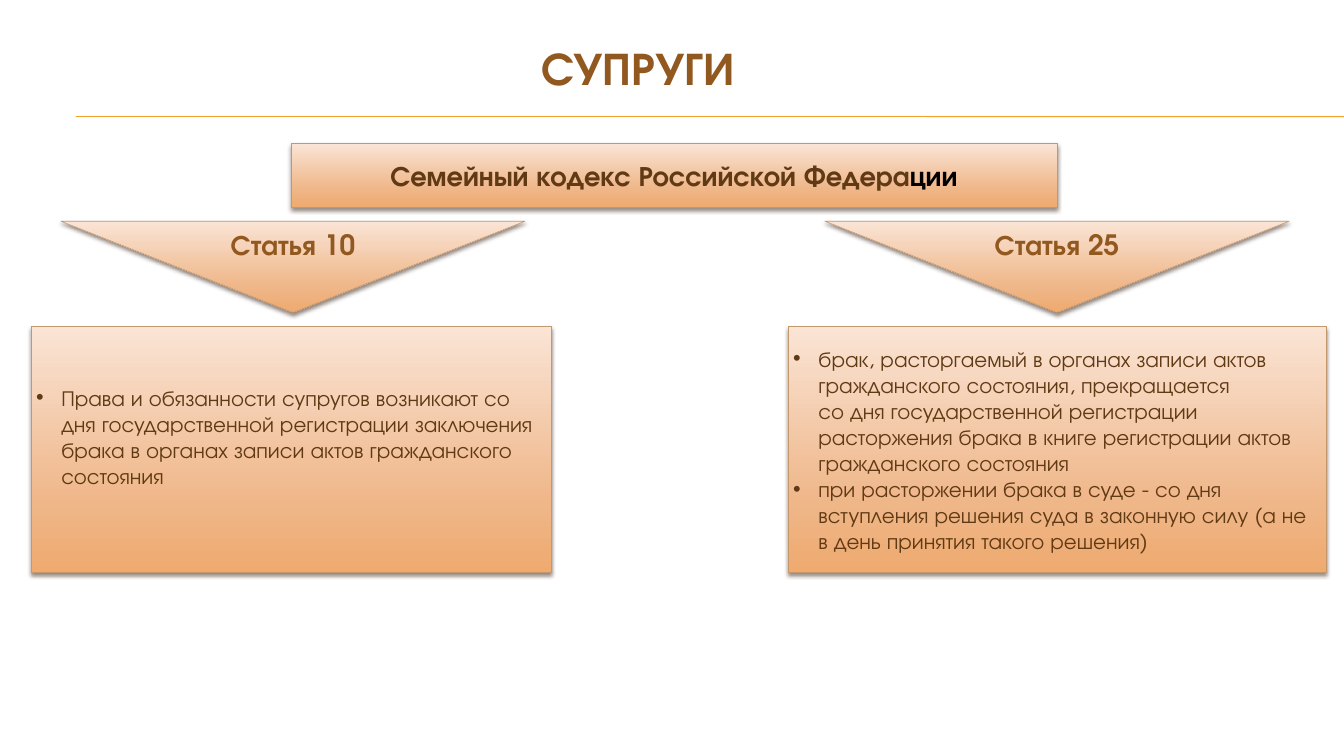
from copy import deepcopy

from lxml import etree
from pptx import Presentation
from pptx.dml.color import RGBColor
from pptx.enum.shapes import MSO_CONNECTOR, MSO_SHAPE
from pptx.enum.text import MSO_ANCHOR, PP_ALIGN
from pptx.oxml.ns import qn
from pptx.util import Cm, Pt

RECT = MSO_SHAPE.RECTANGLE
MERGE = MSO_SHAPE.FLOWCHART_MERGE
STRAIGHT = MSO_CONNECTOR.STRAIGHT
MIDDLE = MSO_ANCHOR.MIDDLE
CENTER, LEFT = PP_ALIGN.CENTER, PP_ALIGN.LEFT

FONT = "TeX Gyre Adventor"
GOLD = RGBColor(0xF0, 0xA2, 0x2E)
BROWN = RGBColor(0x91, 0x58, 0x1F)
DARK = RGBColor(0x60, 0x3A, 0x14)
BLACK = RGBColor(0, 0, 0)
EDGE = RGBColor(0xC3, 0x98, 0x6D)
SHADE = RGBColor(0x4E, 0x3B, 0x30)
STOPS = [
    (0, RGBColor(0xFA, 0xE4, 0xD5)),
    (0.72, RGBColor(0xEF, 0xB6, 0x88)),
    (1, RGBColor(0xEF, 0xAA, 0x6F)),
]

WIDTH, HEIGHT = 67.74, 38.1
INDENT = Cm(1.27)

# Left edges of the article arrow and its box, box width, bottom inset, texts
ARTICLES = [
    (3.07, 1.57, 26.21, 1.45, "Статья 10", [
        "Права и обязанности супругов возникают со дня государственной "
        "регистрации заключения брака в органах записи актов гражданского "
        "состояния",
    ]),
    (41.58, 39.73, 27.1, 0.13, "Статья 25", [
        "брак, расторгаемый в органах записи актов гражданского состояния, "
        "прекращается\vсо дня государственной регистрации расторжения брака "
        "в книге регистрации актов гражданского состояния",
        "при расторжении брака в суде - со дня вступления решения суда "
        "в законную силу (а не в день принятия такого решения)",
    ]),
]


def style(run, size, color, bold):
    font = run.font
    font.name, font.size, font.bold = FONT, Pt(size), bold
    font.color.rgb = color


def write(frame, lines, size, color, bold=True, align=CENTER):
    frame.word_wrap = True
    frame.text = "\n".join(lines)
    for para in frame.paragraphs:
        para.alignment = align
        for run in para.runs:
            style(run, size, color, bold)


def add_bullets(frame):
    for para in frame.paragraphs:
        props = para._p.get_or_add_pPr()
        props.set("marL", str(INDENT))
        props.set("indent", str(-INDENT))
        etree.SubElement(props, qn("a:buFont")).set("typeface", "Arial")
        etree.SubElement(props, qn("a:buChar")).set("char", "•")


def add_shadow(shape):
    shape.shadow.inherit = False
    effects = shape.element.spPr.find(qn("a:effectLst"))
    outer = etree.SubElement(
        effects, qn("a:outerShdw"), blurRad=str(Pt(6)), dist=str(Pt(4)),
        dir="5400000", rotWithShape="0")
    tint = etree.SubElement(outer, qn("a:srgbClr"), val=str(SHADE))
    etree.SubElement(tint, qn("a:alpha"), val="60000")


def add_panel(slide, kind, left, top, width, height):
    shape = slide.shapes.add_shape(
        kind, Cm(left), Cm(top), Cm(width), Cm(height))
    fill = shape.fill
    fill.gradient()
    fill.gradient_angle = 270
    # The default gradient has two stops; a third is needed
    stops = shape.element.spPr.find(qn("a:gradFill")).find(qn("a:gsLst"))
    stops.append(deepcopy(stops[-1]))
    for stop, (place, color) in zip(fill.gradient_stops, STOPS):
        stop.position = place
        stop.color.rgb = color
    shape.line.color.rgb = EDGE
    shape.line.width = Pt(0.79)
    add_shadow(shape)
    shape.text_frame.vertical_anchor = MIDDLE
    return shape.text_frame


def add_rule(slide, start, end):
    rule = slide.shapes.add_connector(
        STRAIGHT, Cm(3.81), Cm(start), Cm(WIDTH), Cm(end))
    rule.line.color.rgb = GOLD
    rule.line.width = Pt(0.75)
    etree.SubElement(rule.element.spPr, qn("a:effectLst"))


def main():
    deck = Presentation()
    deck.slide_width, deck.slide_height = Cm(WIDTH), Cm(HEIGHT)
    slide = deck.slides.add_slide(deck.slide_layouts[6])

    # Title and double rule
    add_rule(slide, 5.84, 5.84)
    add_rule(slide, 5.87, 5.89)
    title = slide.shapes.add_textbox(Cm(19.66), Cm(1.85), Cm(25), Cm(3.07))
    write(title.text_frame, ["СУПРУГИ"], 66, BROWN)

    # Name of the code, its last letters in black
    code = add_panel(slide, RECT, 14.66, 7.24, 38.61, 3.2)
    write(code, ["Семейный кодекс Российской Федера"], 40, DARK)
    ending = code.paragraphs[0].add_run()
    ending.text = "ции"
    style(ending, 40, BLACK, True)

    # Articles: arrow above, rules below
    for arrow_left, left, width, inset, name, rules in ARTICLES:
        arrow = add_panel(slide, MERGE, arrow_left, 11.15, 23.39, 4.6)
        write(arrow, [name], 40, BROWN)
        box = add_panel(slide, RECT, left, 16.46, width, 12.4)
        box.margin_bottom = Cm(inset)
        write(box, rules, 31, DARK, False, LEFT)
        add_bullets(box)

    deck.save("out.pptx")


if __name__ == "__main__":
    main()
